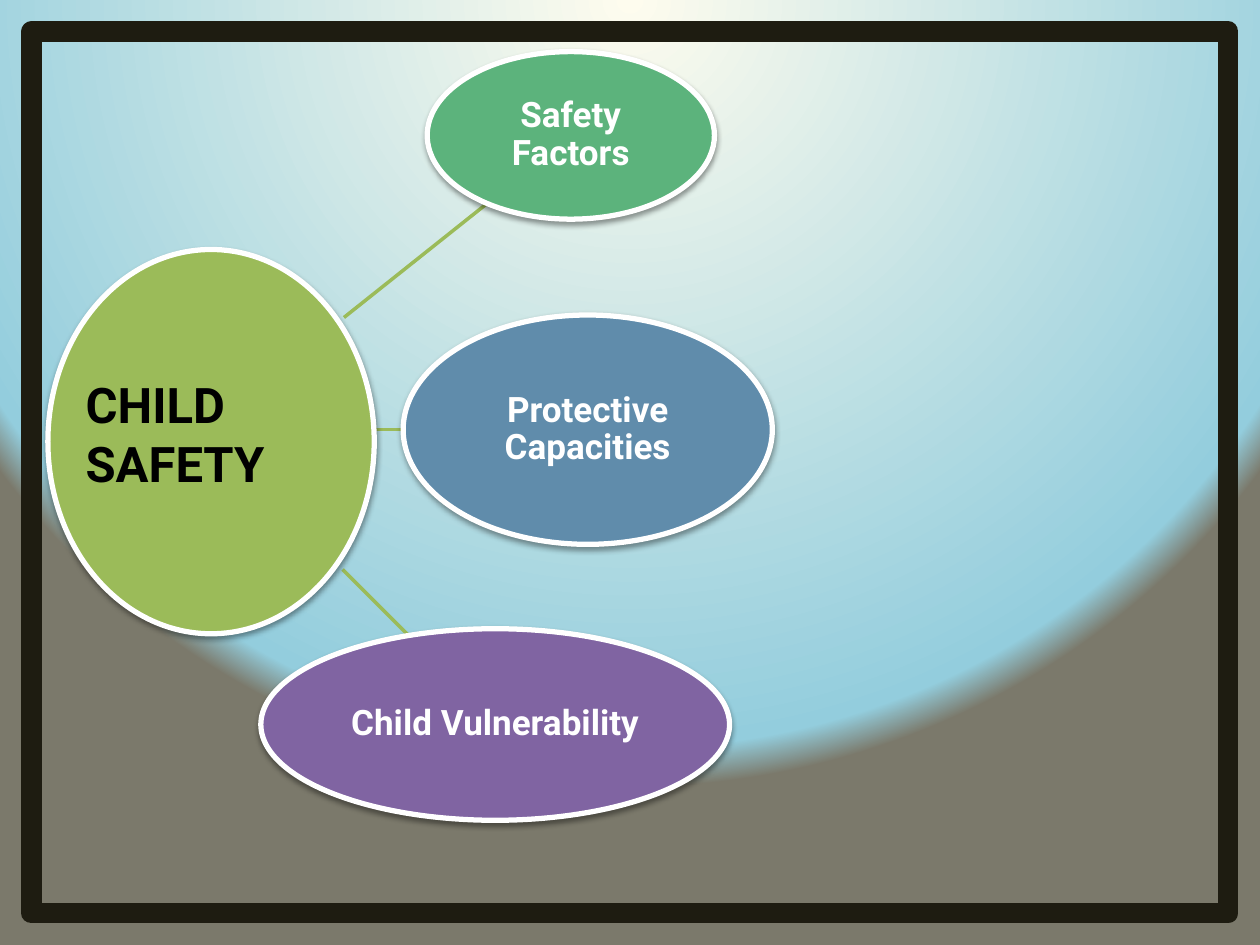
import pptx
import pptx.util
import pptx.dml.color
import pptx.enum.shapes
import pptx.enum.text
import pptx.oxml
import pptx.oxml.ns
from pptx.util import Inches

NS = pptx.oxml.ns.nsdecls("a")
FONT = "Roboto"
GREEN = "9BBB59"
SHADOW = (
    f'<a:effectLst {NS}><a:outerShdw blurRad="40000" dist="20000" dir="5400000" rotWithShape="0">'
    '<a:srgbClr val="000000"><a:alpha val="38000"/></a:srgbClr></a:outerShdw></a:effectLst>'
)


def rgb(value):
    return pptx.dml.color.RGBColor.from_string(value)


class Deck:
    def __init__(self):
        self.prs = pptx.Presentation()
        self.prs.slide_width, self.prs.slide_height = Inches(10), Inches(7.5)
        self.s = self.prs.slides.add_slide(self.prs.slide_layouts[5])

    def background(self, stops):
        """Fill the slide with a circular gradient centred above its top edge."""
        self.s.background.fill.gradient()
        grad = self.s.element.find(".//" + pptx.oxml.ns.qn("a:gradFill"))
        for child in list(grad):
            grad.remove(child)
        stop_xml = "".join(
            f'<a:gs pos="{pos * 1000}"><a:srgbClr val="{color}"/></a:gs>' for pos, color in stops
        )
        grad.append(pptx.oxml.parse_xml(f"<a:gsLst {NS}>{stop_xml}</a:gsLst>"))
        grad.append(pptx.oxml.parse_xml(
            f'<a:path {NS} path="circle">'
            '<a:fillToRect l="50000" t="-80000" r="50000" b="180000"/></a:path>'
        ))

    def run(self, p, text, size, color):
        r = p.add_run()
        r.text = text
        r.font.name, r.font.size, r.font.bold = FONT, pptx.util.Pt(size), True
        r.font.color.rgb = rgb(color)

    def spoke(self, x1, y1, x2, y2):
        line = self.s.shapes.add_connector(
            pptx.enum.shapes.MSO_CONNECTOR.STRAIGHT,
            Inches(x1), Inches(y1), Inches(x2), Inches(y2),
        )
        line.line.color.rgb = rgb(GREEN)
        line.line.width = pptx.util.Pt(2)
        line.element.spPr.append(pptx.oxml.parse_xml(f"<a:effectLst {NS}/>"))

    def ellipse(self, x, y, w, h, color, text=None):
        sp = self.s.shapes.add_shape(
            pptx.enum.shapes.MSO_SHAPE.OVAL, Inches(x), Inches(y), Inches(w), Inches(h)
        )
        sp.fill.solid()
        sp.fill.fore_color.rgb = rgb(color)
        sp.line.color.rgb = rgb("FFFFFF")
        sp.line.width = pptx.util.Pt(3)
        sp.element.spPr.append(pptx.oxml.parse_xml(SHADOW))
        if text:
            tf = sp.text_frame
            tf.word_wrap = True
            tf.vertical_anchor = pptx.enum.text.MSO_ANCHOR.MIDDLE
            tf.margin_left = tf.margin_right = tf.margin_top = tf.margin_bottom = Inches(0.01)
            p = tf.paragraphs[0]
            p.alignment = pptx.enum.text.PP_ALIGN.CENTER
            p.line_spacing = 0.9
            self.run(p, text, 20, "FFFFFF")

    def title(self, x, y, w, h, text):
        """Place the title above the shapes drawn so far."""
        sp = self.s.shapes.title
        sp.left, sp.top, sp.width, sp.height = Inches(x), Inches(y), Inches(w), Inches(h)
        self.s.shapes.element.append(sp.element)
        tf = sp.text_frame
        tf.word_wrap = True
        tf.auto_size = pptx.enum.text.MSO_AUTO_SIZE.SHAPE_TO_FIT_TEXT
        tf.vertical_anchor = pptx.enum.text.MSO_ANCHOR.TOP
        p = tf.paragraphs[0]
        p.alignment = pptx.enum.text.PP_ALIGN.LEFT
        self.run(p, text, 28, "000000")

    def frame(self, margin, color, width):
        sp = self.s.shapes.add_shape(
            pptx.enum.shapes.MSO_SHAPE.RECTANGLE, Inches(margin), Inches(margin),
            self.prs.slide_width - 2 * Inches(margin),
            self.prs.slide_height - 2 * Inches(margin),
        )
        sp.shadow.inherit = False
        sp.fill.background()
        sp.line.color.rgb = rgb(color)
        sp.line.width = pptx.util.Pt(width)
        sp.line._ln.append(pptx.oxml.parse_xml(f"<a:round {NS}/>"))


def main():
    deck = Deck()
    deck.background([(0, "FEFCEE"), (95, "93CDDD"), (100, "7B796B")])

    for ends in [(2.72, 4.52, 3.24, 5.04), (2.73, 3.41, 3.2, 3.41), (2.73, 2.52, 3.86, 1.62)]:
        deck.spoke(*ends)

    deck.ellipse(0.38, 1.98, 2.59, 3.05, GREEN)
    for topic in [
        (3.39, 0.41, 2.28, 1.33, "5CB37C", "Safety Factors"),
        (3.2, 2.5, 2.93, 1.82, "608CAB", "Protective Capacities"),
        (2.07, 4.99, 3.72, 1.52, "8064A2", "Child Vulnerability"),
    ]:
        deck.ellipse(*topic)

    deck.title(0.58, 2.92, 1.92, 1.04, "CHILD SAFETY")
    deck.frame(0.25, "1E1C11", 11.5)
    deck.prs.save("out.pptx")


if __name__ == "__main__":
    main()
